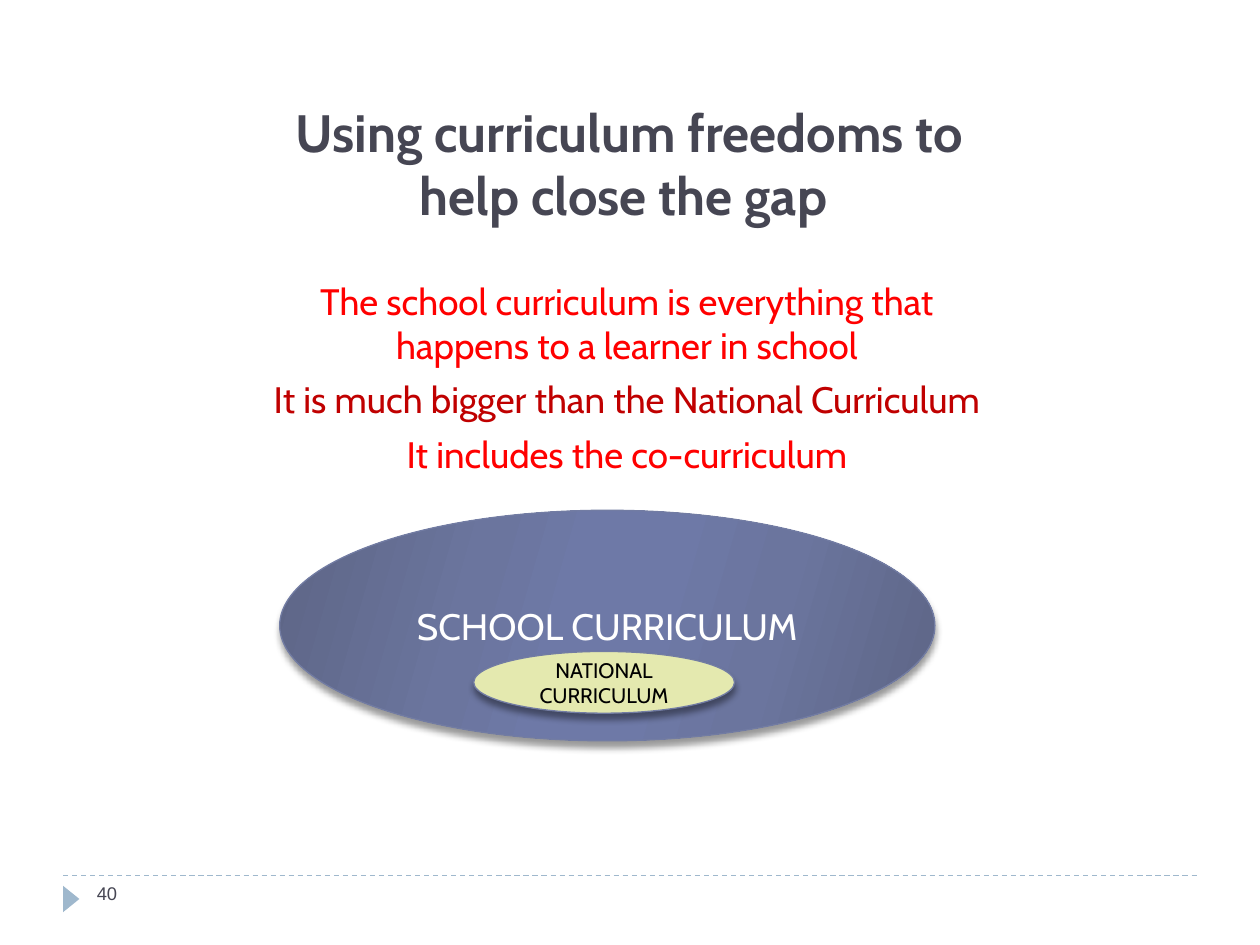
from lxml import etree
from pptx import Presentation
from pptx.dml.color import RGBColor
from pptx.enum import dml, shapes, text
from pptx.oxml import parse_xml
from pptx.oxml.ns import nsdecls, qn
from pptx.util import Inches, Pt

RED = "FF0000"
EDGE = "727CA3"
PALE = "9FB8CD"
SLATE = "464653"
STOPS = [(0, "5D6585"), (30, "6B759E"), (45, "6E79A7"),
         (55, "6E79A7"), (73, "6B759E"), (100, "5D6585")]


def color(code):
    return RGBColor.from_string(code)


def paint(shape, code):
    shape.fill.solid()
    shape.fill.fore_color.rgb = color(code)


def write(shape, lines, fmt, anchor, align, gap=0):
    """Fill a shape with paragraphs given as (words, colour) pairs."""
    frame = shape.text_frame
    frame.word_wrap = True
    frame.vertical_anchor = anchor
    for i, (words, code) in enumerate(lines):
        para = frame.add_paragraph() if i else frame.paragraphs[0]
        para.alignment = align
        if i and gap:
            para.space_before = Pt(gap)
        run = para.add_run()
        run.text = words
        for name, value in fmt.items():
            setattr(run.font, name, value)
        run.font.color.rgb = color(code)


def label(slide, box, lines, fmt, anchor=text.MSO_ANCHOR.TOP,
          align=text.PP_ALIGN.CENTER, gap=0):
    area = slide.shapes.add_textbox(*map(Inches, box))
    write(area, lines, fmt, anchor, align, gap)


def shade(shape):
    """Give a shape a soft shadow just below it."""
    shape.shadow.inherit = False
    effects = shape._element.spPr.find(qn("a:effectLst"))
    effects.append(parse_xml(
        f'<a:outerShdw {nsdecls("a")} blurRad="{Pt(4)}" dist="{Pt(3.4)}" '
        'dir="5400000" rotWithShape="0"><a:srgbClr val="000000">'
        '<a:alpha val="40000"/></a:srgbClr></a:outerShdw>'))


def blend(shape, stops, angle):
    """Fill a shape with a linear gradient of (percent, colour) stops."""
    shape.fill.gradient()
    grad = shape._element.spPr.find(qn("a:gradFill"))
    for child in list(grad):
        grad.remove(child)
    group = etree.SubElement(grad, qn("a:gsLst"))
    for place, code in stops:
        stop = etree.SubElement(group, qn("a:gs"), pos=str(place * 1000))
        etree.SubElement(stop, qn("a:srgbClr"), val=code)
    etree.SubElement(grad, qn("a:lin"), ang=str(angle * 60000), scaled="0")


def oval(slide, box, words, code, size):
    shape = slide.shapes.add_shape(shapes.MSO_SHAPE.OVAL, *map(Inches, box))
    shape.line.color.rgb = color(EDGE)
    shape.line.width = Pt(0.75)
    write(shape, [(words, code)], {"name": "Cabin", "size": Pt(size)},
          text.MSO_ANCHOR.MIDDLE, text.PP_ALIGN.CENTER)
    return shape


def nest(slide, box):
    """Draw the national curriculum as a small oval inside the school one."""
    left, top, width, height = box
    school = oval(slide, box, "SCHOOL CURRICULUM", "FFFFFF", 21)
    blend(school, STOPS, 16)
    inner = (left + 1.54, top + 1.12, width - 3.13, height - 1.34)
    nation = oval(slide, inner, "NATIONAL CURRICULUM", "000000", 12)
    paint(nation, "E4E9AF")
    for shape in (school, nation):
        shade(shape)


def footer(slide, box, number):
    left, top, width, height = box
    rule = slide.shapes.add_connector(
        shapes.MSO_CONNECTOR.STRAIGHT, Inches(left), Inches(top),
        Inches(left + width), Inches(top))
    rule.line.color.rgb = color(PALE)
    rule.line.width = Pt(0.75)
    rule.line.dash_style = dml.MSO_LINE.DASH
    etree.SubElement(rule._element.spPr, qn("a:effectLst"))
    mark = slide.shapes.add_shape(
        shapes.MSO_SHAPE.ISOSCELES_TRIANGLE, Inches(left - 0.04),
        Inches(top + 0.12), Inches(0.21), Inches(0.13))
    mark.rotation = 90
    mark.shadow.inherit = False
    mark.line.fill.background()
    paint(mark, PALE)
    label(slide, (left + 0.17, top, 2.17, height), [(number, SLATE)],
          {"name": "Arial", "size": Pt(10.5)}, align=text.PP_ALIGN.LEFT)


def main():
    deck = Presentation()
    deck.slide_width, deck.slide_height = Inches(10), Inches(7.5)
    slide = deck.slides.add_slide(deck.slide_layouts[6])
    footer(slide, (0.5, 6.95, 9, 0.4), "40")
    label(slide, (2.22, 0.68, 5.55, 1.16),
          [("Using curriculum freedoms to help close the gap ", SLATE)],
          {"name": "Cabin", "size": Pt(30), "bold": True},
          anchor=text.MSO_ANCHOR.BOTTOM)
    label(slide, (2.05, 2.16, 5.85, 3.9), [
        ("The school curriculum is everything that happens to a learner "
         "in school", RED),
        ("It is much bigger than the National Curriculum", "C00000"),
        ("It includes the co-curriculum", RED),
    ], {"name": "Cabin", "size": Pt(21)}, gap=6)
    nest(slide, (2.22, 4.05, 5.2, 1.83))
    deck.save("out.pptx")


if __name__ == "__main__":
    main()
